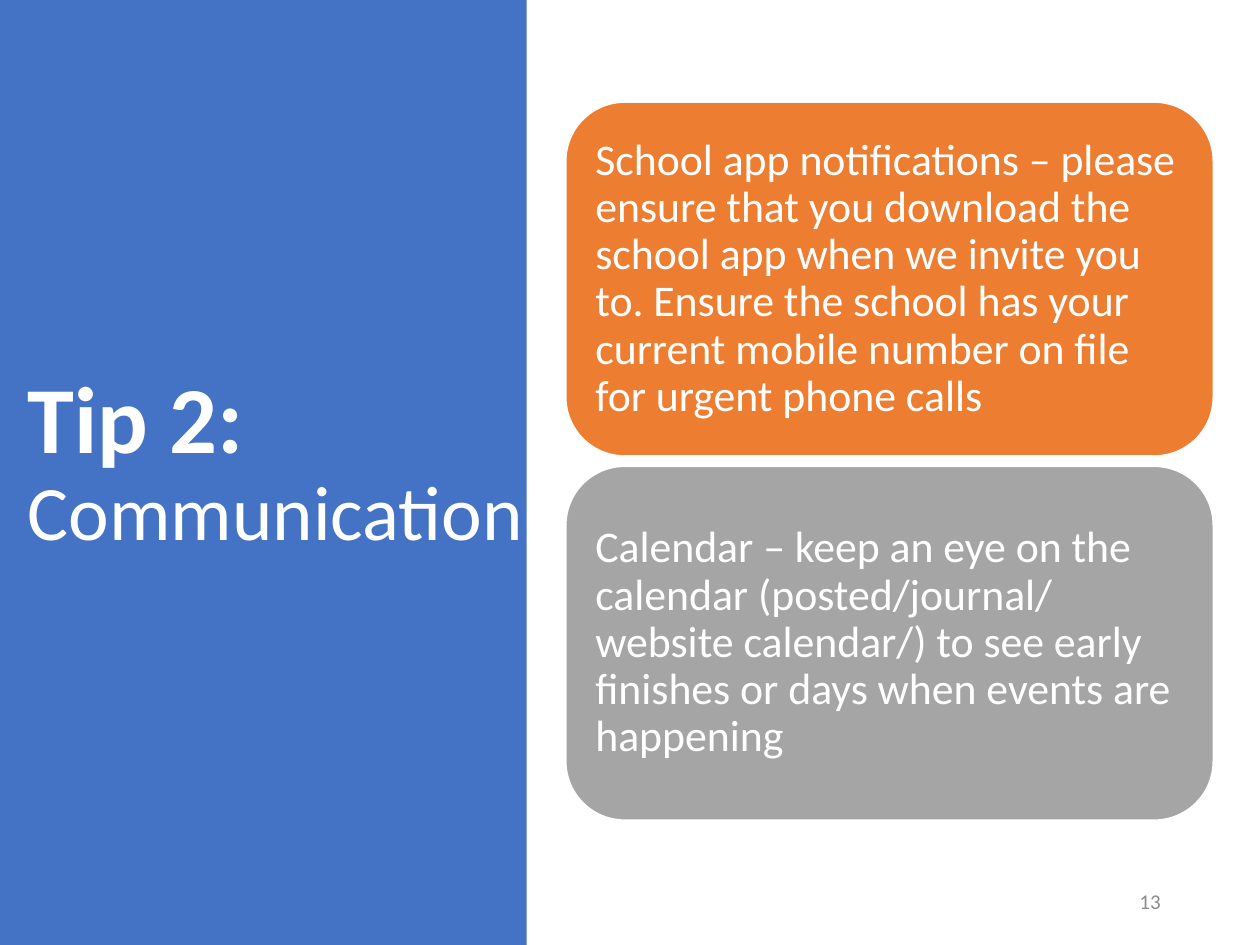
import pptx
import pptx.util
import pptx.dml.color
import pptx.enum.shapes
import pptx.enum.text

Inches, Pt = pptx.util.Inches, pptx.util.Pt
MSO_SHAPE = pptx.enum.shapes.MSO_SHAPE
PP_ALIGN = pptx.enum.text.PP_ALIGN
MIDDLE = pptx.enum.text.MSO_ANCHOR.MIDDLE

COLORS = {"blue": "4472C4", "orange": "ED7D31", "gray": "A5A5A5",
          "white": "FFFFFF", "number": "8C8C8C"}
FONT = "Calibri"
TITLE = [("Tip 2:", 54, True), ("Communication", 44, False)]
CARDS = [
    ("School app notifications – please ensure that you download the school app "
     "when we invite you to. Ensure the school has your current mobile number on "
     "file for urgent phone calls", "orange"),
    ("Calendar – keep an eye on the calendar (posted/journal/ website calendar/) "
     "to see early finishes or days when events are happening", "gray"),
]
PAGE = "13"
CARD_LEFT, CARD_TOP, CARD_W, CARD_H, CARD_STEP = 4.49, 0.81, 5.14, 2.81, 2.89


def rgb(name):
    return pptx.dml.color.RGBColor.from_string(COLORS[name])


def add_block(s, kind, box, fill):
    sp = s.shapes.add_shape(kind, *map(Inches, box))
    sp.shadow.inherit = False
    sp.fill.solid()
    sp.fill.fore_color.rgb = rgb(fill)
    sp.line.fill.background()
    return sp


def style(p, color, align, size=None):
    p.alignment = align
    p.font.name = FONT
    p.font.color.rgb = rgb(color)
    if size:
        p.font.size = Pt(size)


def add_title(s):
    title = s.shapes.title
    title.left, title.top, title.width, title.height = map(Inches, (0.12, 0.68, 4.17, 6.02))
    tf = title.text_frame
    tf.word_wrap = True
    tf.auto_size = pptx.enum.text.MSO_AUTO_SIZE.NONE
    tf.vertical_anchor = MIDDLE
    p = tf.paragraphs[0]
    p.line_spacing = 0.9
    style(p, "white", PP_ALIGN.LEFT)
    for i, (text, size, bold) in enumerate(TITLE):
        if i:
            p.add_line_break()
        r = p.add_run()
        r.text = text
        r.font.size = Pt(size)
        r.font.bold = bold
    return title


def add_card(s, top, text, fill):
    sp = add_block(s, MSO_SHAPE.ROUNDED_RECTANGLE, (CARD_LEFT, top, CARD_W, CARD_H), fill)
    sp.line.color.rgb = rgb("white")
    sp.line.width = Pt(1)
    tf = sp.text_frame
    tf.word_wrap = True
    tf.vertical_anchor = MIDDLE
    tf.margin_left = tf.margin_right = tf.margin_top = tf.margin_bottom = Inches(0.1)
    p = tf.paragraphs[0]
    p.text = text
    p.line_spacing = 0.9
    style(p, "white", PP_ALIGN.LEFT, 25)


def add_page_number(s):
    tf = s.shapes.add_textbox(*map(Inches, (7.06, 6.95, 2.25, 0.4))).text_frame
    tf.word_wrap = True
    tf.vertical_anchor = MIDDLE
    p = tf.paragraphs[0]
    p.text = PAGE
    style(p, "number", PP_ALIGN.RIGHT, 12)


def main():
    prs = pptx.Presentation()
    prs.slide_width, prs.slide_height = Inches(10), Inches(7.5)
    s = prs.slides.add_slide(prs.slide_layouts[5])
    title = add_title(s)
    panel = add_block(s, MSO_SHAPE.RECTANGLE, (0, 0, 4.18, 7.5), "blue")
    title.element.addprevious(panel.element)
    for i, (text, fill) in enumerate(CARDS):
        add_card(s, CARD_TOP + i * CARD_STEP, text, fill)
    add_page_number(s)
    prs.save("out.pptx")


if __name__ == "__main__":
    main()
